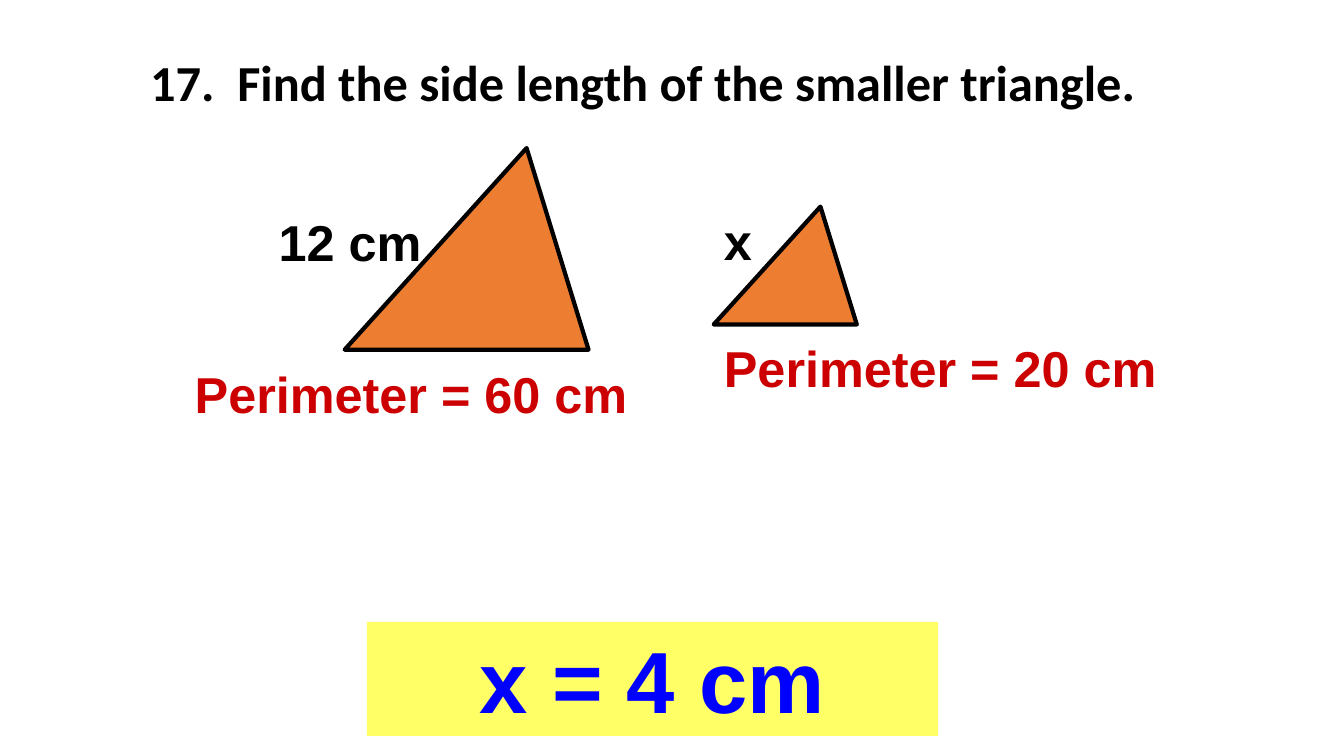
from pptx import Presentation
from pptx.dml.color import RGBColor
from pptx.enum.shapes import MSO_SHAPE
from pptx.enum.text import MSO_ANCHOR, MSO_AUTO_SIZE, PP_ALIGN
from pptx.util import Pt

BLACK = RGBColor(0x00, 0x00, 0x00)
RED = RGBColor(0xCC, 0x00, 0x00)
BLUE = RGBColor(0x00, 0x00, 0xFF)
ORANGE = RGBColor(0xED, 0x7D, 0x31)
YELLOW = RGBColor(0xFF, 0xFF, 0x66)

# Every box is (left, top, width, height) in points.
QUESTION = ("17.  Find the side length of the smaller triangle.", (100, 5, 720, 111.6))
TRIANGLES = [(509.8, 147.6, 102.2, 84.2), (246.2, 105.8, 174.2, 144)]
APEX = 0.746
LABELS = [
    ("12 cm", BLACK, (192, 147.6, 123, 50.4)),
    ("x", BLACK, (510, 146.2, 114, 50.4)),
    ("Perimeter = 60 cm", RED, (132, 255.6, 342, 50.4)),
    ("Perimeter = 20 cm", RED, (510, 237.6, 345, 50.4)),
]
ANSWER = ("x = 4 cm", (262, 444.2, 408.2, 81.4))


def in_points(box):
    return [Pt(length) for length in box]


def write(shape, text, size=36, font="Arial", color=BLACK,
          align=PP_ALIGN.LEFT, anchor=MSO_ANCHOR.TOP, line_spacing=1.0):
    frame = shape.text_frame
    frame.word_wrap = True
    frame.auto_size = MSO_AUTO_SIZE.NONE
    frame.vertical_anchor = anchor
    paragraph = frame.paragraphs[0]
    paragraph.alignment = align
    paragraph.line_spacing = line_spacing
    run = paragraph.add_run()
    run.text = text
    run.font.size = Pt(size)
    run.font.name = font
    run.font.bold = True
    run.font.color.rgb = color


def add_filled(slide, preset, box, fill):
    shape = slide.shapes.add_shape(preset, *in_points(box))
    shape.shadow.inherit = False
    shape.fill.solid()
    shape.fill.fore_color.rgb = fill
    return shape


def main():
    deck = Presentation()
    deck.slide_width, deck.slide_height = Pt(960), Pt(540)
    slide = deck.slides.add_slide(deck.slide_layouts[5])

    question, box = QUESTION
    title = slide.shapes.title
    title.left, title.top, title.width, title.height = in_points(box)
    write(title, question, font="Calibri", anchor=MSO_ANCHOR.MIDDLE, line_spacing=0.9)

    for box in TRIANGLES:
        triangle = add_filled(slide, MSO_SHAPE.ISOSCELES_TRIANGLE, box, ORANGE)
        triangle.adjustments[0] = APEX
        triangle.line.color.rgb = BLACK
        triangle.line.width = Pt(3)

    for label, color, box in LABELS:
        write(slide.shapes.add_textbox(*in_points(box)), label, color=color)

    answer, box = ANSWER
    answer_panel = add_filled(slide, MSO_SHAPE.RECTANGLE, box, YELLOW)
    answer_panel.line.fill.background()
    write(answer_panel, answer, size=62, color=BLUE, align=PP_ALIGN.CENTER)

    deck.save("out.pptx")


if __name__ == "__main__":
    main()
